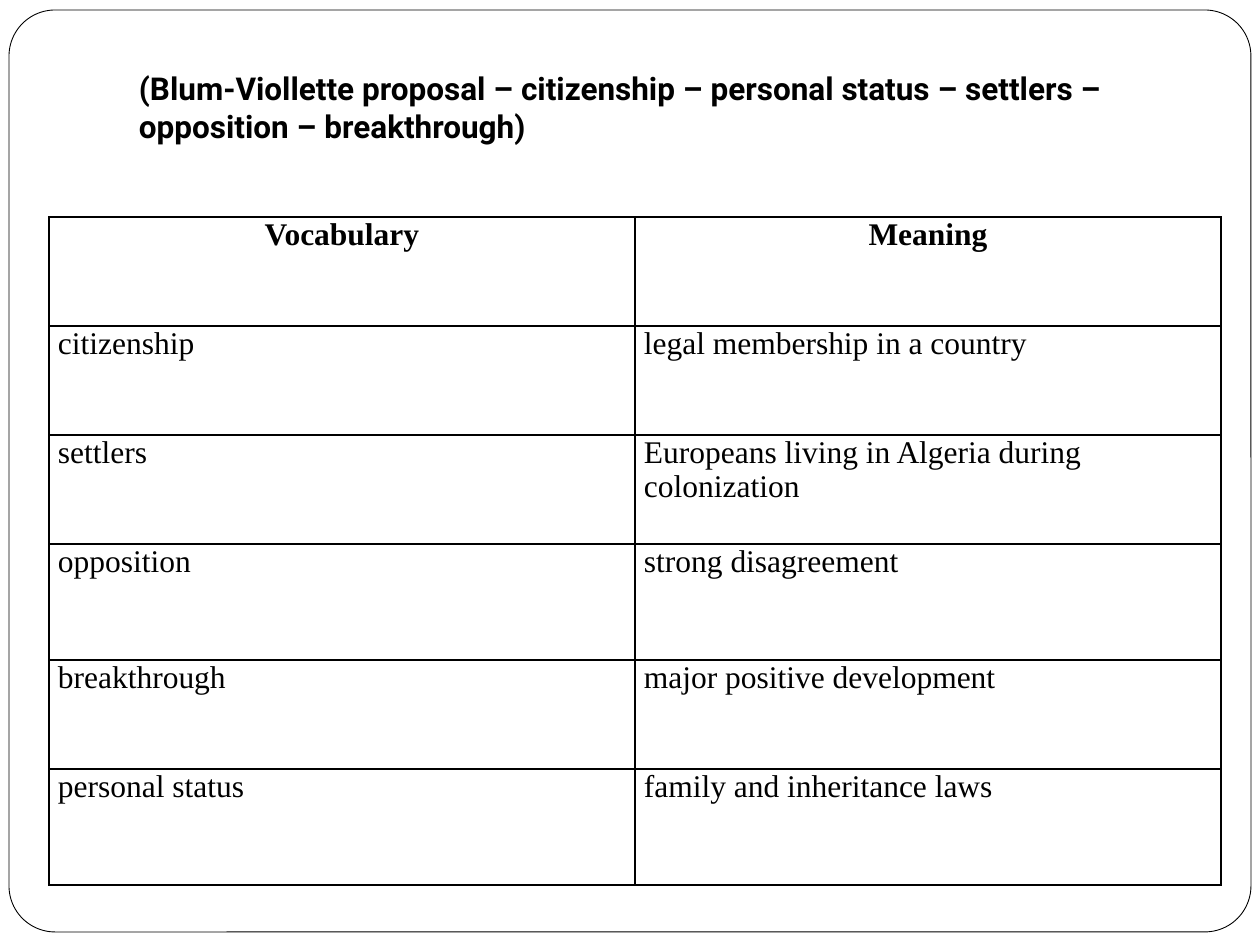
from lxml import etree
from pptx import Presentation
from pptx.dml.color import RGBColor
from pptx.enum.shapes import MSO_SHAPE
from pptx.enum.text import MSO_ANCHOR, PP_ALIGN
from pptx.oxml import parse_xml
from pptx.oxml.ns import nsdecls
from pptx.util import Emu, Pt

SCALE = 914400 / 126
BLACK, WHITE = "000000", "FFFFFF"


def px(length):
    return Emu(round(length * SCALE))


def color(hex_code):
    return RGBColor.from_string(hex_code)


prs = Presentation()
prs.slide_width, prs.slide_height = px(1260), px(945)
slide = prs.slides.add_slide(prs.slide_layouts[6])

frame = slide.shapes.add_shape(MSO_SHAPE.ROUNDED_RECTANGLE, px(9), px(10), px(1242), px(922))
frame.adjustments[0] = 0.05
frame.shadow.inherit = False
frame.fill.solid()
frame.fill.fore_color.rgb = color(WHITE)
frame.line.color.rgb = color(BLACK)
frame.line.width = Pt(0.5)

title = slide.shapes.add_textbox(px(126), px(38), px(1071), px(157)).text_frame
title_format = {
    "word_wrap": True,
    "vertical_anchor": MSO_ANCHOR.BOTTOM,
    "margin_left": px(13),
    "margin_right": px(13),
    "margin_top": px(6),
    "margin_bottom": px(50),
}
for name, value in title_format.items():
    setattr(title, name, value)
title.text = (
    "(Blum-Viollette proposal – citizenship – personal status – settlers – "
    "opposition – breakthrough)"
)
title_font = title.paragraphs[0].font
for name, value in {"name": "Roboto", "size": Pt(18), "bold": True}.items():
    setattr(title_font, name, value)
title_font.color.rgb = color(BLACK)

entries = [
    ("Vocabulary", "Meaning"),
    ("citizenship", "legal membership in a country"),
    ("settlers", "Europeans living in Algeria during colonization"),
    ("opposition", "strong disagreement"),
    ("breakthrough", "major positive development"),
    ("personal status", "family and inheritance laws"),
]
row_heights = [109, 109, 109, 116, 109, 116]
glossary = slide.shapes.add_table(
    len(entries), 2, px(49), px(217), px(1172), px(sum(row_heights))
).table
for column in glossary.columns:
    column.width = px(586)

cell_format = {
    "margin_left": px(9),
    "margin_right": px(9),
    "margin_top": 0,
    "margin_bottom": 0,
    "vertical_anchor": MSO_ANCHOR.TOP,
}
for row, (height, entry) in enumerate(zip(row_heights, entries)):
    glossary.rows[row].height = px(height)
    is_header = row == 0
    for col, wording in enumerate(entry):
        cell = glossary.cell(row, col)
        for name, value in cell_format.items():
            setattr(cell, name, value)
        cell.text = wording
        paragraph = cell.text_frame.paragraphs[0]
        paragraph.alignment = PP_ALIGN.CENTER if is_header else PP_ALIGN.LEFT
        cell_font = {"name": "Times New Roman", "size": Pt(18), "bold": is_header}
        for name, value in cell_font.items():
            setattr(paragraph.font, name, value)
        paragraph.font.color.rgb = color(BLACK)

        # Borders must come before the fill in the cell properties
        properties = cell._tc.get_or_add_tcPr()
        for side in ("lnL", "lnR", "lnT", "lnB"):
            properties.append(parse_xml(
                f'<a:{side} {nsdecls("a")} w="{Pt(1)}"><a:solidFill>'
                f'<a:srgbClr val="{BLACK}"/></a:solidFill></a:{side}>'
            ))
        cell.fill.solid()
        cell.fill.fore_color.rgb = color(WHITE)

prs.save("out.pptx")
